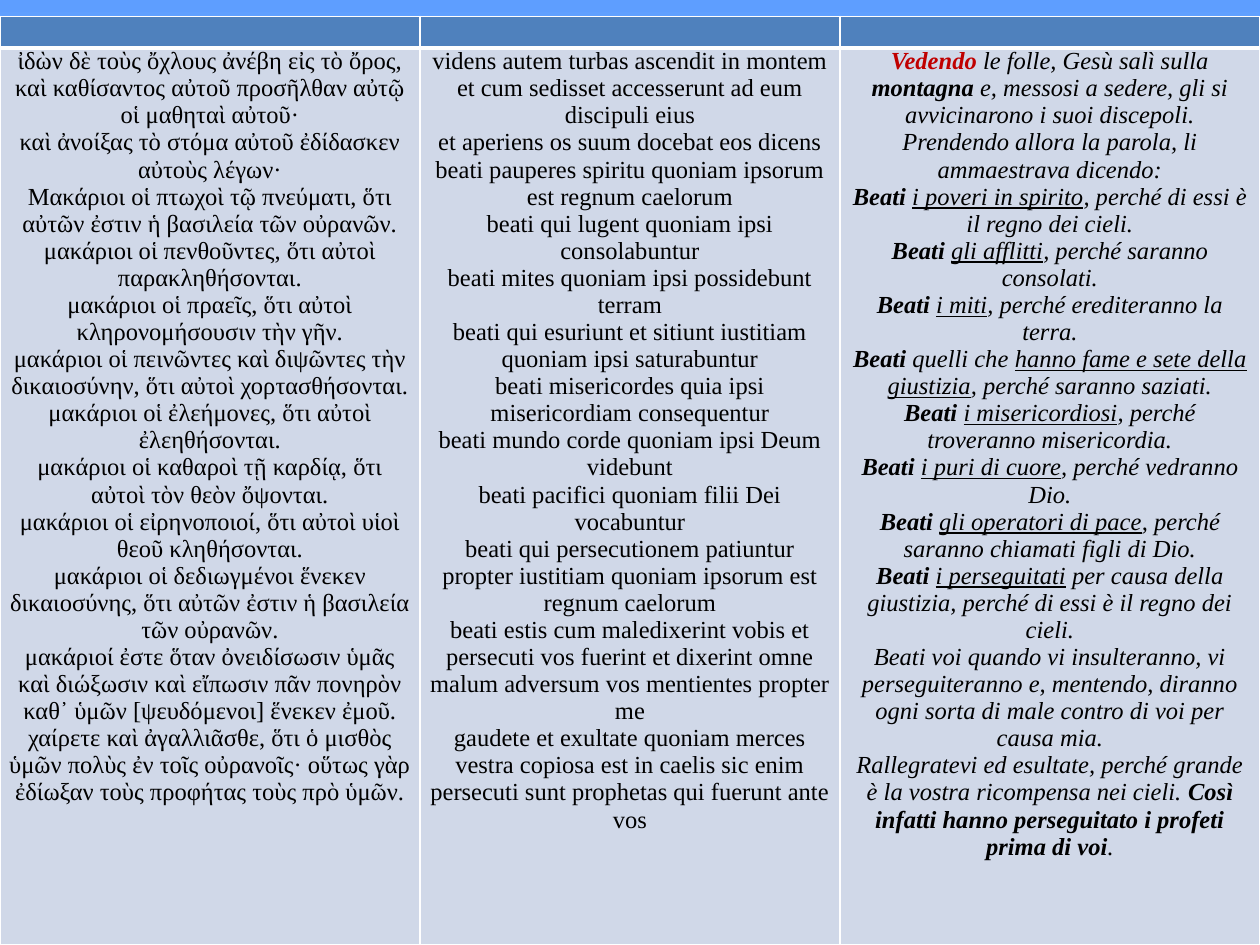
from dataclasses import dataclass

import pptx
import pptx.dml.color
import pptx.enum.text
import pptx.oxml
import pptx.oxml.ns
import pptx.util
from lxml import etree

Inches = pptx.util.Inches
Pt = pptx.util.Pt
RGB = pptx.dml.color.RGBColor.from_string
qn = pptx.oxml.ns.qn


@dataclass(frozen=True)
class Theme:
    font: str = "Times New Roman"
    size: float = 14
    ink: str = "000000"
    red: str = "C00000"
    head: str = "4F81BD"
    body: str = "D0D8E8"
    line: str = "FFFFFF"
    thin: float = 1
    thick: float = 3
    sky: tuple = ((0, "5E9EFF"), (26, "85C2FF"), (70, "C4D6EB"), (100, "FFEBFA"))


@dataclass(frozen=True)
class Part:
    text: str
    bold: bool = False
    under: bool = False
    color: str | None = None


@dataclass(frozen=True)
class Column:
    verses: list[list[Part]]
    slant: bool = False


THEME = Theme()


def plain(*lines: str) -> list[list[Part]]:
    return [[Part(line)] for line in lines]


def bless(who: str, rest: str) -> list[Part]:
    return [Part("Beati ", bold=True), Part(who, under=True), Part(rest)]


GREEK = Column(plain(
    "ἰδὼν δὲ τοὺς ὄχλους ἀνέβη εἰς τὸ ὄρος, καὶ καθίσαντος αὐτοῦ προσῆλθαν αὐτῷ οἱ μαθηταὶ αὐτοῦ·",
    "καὶ ἀνοίξας τὸ στόμα αὐτοῦ ἐδίδασκεν αὐτοὺς λέγων·",
    "Μακάριοι οἱ πτωχοὶ τῷ πνεύματι, ὅτι αὐτῶν ἐστιν ἡ βασιλεία τῶν οὐρανῶν.",
    "μακάριοι οἱ πενθοῦντες, ὅτι αὐτοὶ παρακληθήσονται.",
    "μακάριοι οἱ πραεῖς, ὅτι αὐτοὶ κληρονομήσουσιν τὴν γῆν.",
    "μακάριοι οἱ πεινῶντες καὶ διψῶντες τὴν δικαιοσύνην, ὅτι αὐτοὶ χορτασθήσονται.",
    "μακάριοι οἱ ἐλεήμονες, ὅτι αὐτοὶ ἐλεηθήσονται.",
    "μακάριοι οἱ καθαροὶ τῇ καρδίᾳ, ὅτι αὐτοὶ τὸν θεὸν ὄψονται.",
    "μακάριοι οἱ εἰρηνοποιοί, ὅτι αὐτοὶ υἱοὶ θεοῦ κληθήσονται.",
    "μακάριοι οἱ δεδιωγμένοι ἕνεκεν δικαιοσύνης, ὅτι αὐτῶν ἐστιν ἡ βασιλεία τῶν οὐρανῶν.",
    "μακάριοί ἐστε ὅταν ὀνειδίσωσιν ὑμᾶς καὶ διώξωσιν καὶ εἴπωσιν πᾶν πονηρὸν "
    "καθ᾽ ὑμῶν [ψευδόμενοι] ἕνεκεν ἐμοῦ.",
    "χαίρετε καὶ ἀγαλλιᾶσθε, ὅτι ὁ μισθὸς ὑμῶν πολὺς ἐν τοῖς οὐρανοῖς· "
    "οὕτως γὰρ ἐδίωξαν τοὺς προφήτας τοὺς πρὸ ὑμῶν.",
))

LATIN = Column(plain(
    "videns autem turbas ascendit in montem et cum sedisset accesserunt ad eum discipuli eius",
    "et aperiens os suum docebat eos dicens",
    "beati pauperes spiritu quoniam ipsorum est regnum caelorum",
    "beati qui lugent quoniam ipsi consolabuntur",
    "beati mites quoniam ipsi possidebunt terram",
    "beati qui esuriunt et sitiunt iustitiam quoniam ipsi saturabuntur",
    "beati misericordes quia ipsi misericordiam consequentur",
    "beati mundo corde quoniam ipsi Deum videbunt",
    "beati pacifici quoniam filii Dei vocabuntur",
    "beati qui persecutionem patiuntur propter iustitiam quoniam ipsorum est regnum caelorum",
    "beati estis cum maledixerint vobis et persecuti vos fuerint et dixerint omne malum "
    "adversum vos mentientes propter me",
    "gaudete et exultate quoniam merces vestra copiosa est in caelis sic enim persecuti sunt "
    "prophetas qui fuerunt ante vos",
))

TUSCAN = Column([
    [Part("Vedendo", bold=True, color=THEME.red), Part(" le folle, Gesù salì sulla "),
     Part("montagna", bold=True),
     Part(" e, messosi a sedere, gli si avvicinarono i suoi discepoli.")],
    [Part("Prendendo allora la parola, li ammaestrava dicendo:")],
    bless("i poveri in spirito", ", perché di essi è il regno dei cieli."),
    bless("gli afflitti", ", perché saranno consolati."),
    bless("i miti", ", perché erediteranno la terra."),
    [Part("Beati", bold=True), Part(" quelli che "),
     Part("hanno fame e sete della giustizia", under=True), Part(", perché saranno saziati.")],
    bless("i misericordiosi", ", perché troveranno misericordia."),
    bless("i puri di cuore", ", perché vedranno Dio."),
    bless("gli operatori di pace", ", perché saranno chiamati figli di Dio."),
    bless("i perseguitati", " per causa della giustizia, perché di essi è il regno dei cieli."),
    [Part("Beati voi quando vi insulteranno, vi perseguiteranno e, mentendo, diranno ogni sorta "
          "di male contro di voi per causa mia.")],
    [Part("Rallegratevi ed esultate, perché grande è la vostra ricompensa nei cieli. "),
     Part("Così infatti hanno perseguitato i profeti prima di voi", bold=True), Part(".")],
], slant=True)


def paint_sky(slide) -> None:
    fill = slide.background.fill
    fill.gradient()
    grad = slide.background._cSld.find(".//" + qn("a:gradFill"))
    stops = grad.find(qn("a:gsLst"))
    for old in list(stops):
        stops.remove(old)
    for spot, color in THEME.sky:
        stop = etree.SubElement(stops, qn("a:gs"), pos=str(spot * 1000))
        etree.SubElement(stop, qn("a:srgbClr"), val=color)
    lin = grad.find(qn("a:lin"))
    lin.set("ang", str(90 * 60000))
    lin.set("scaled", "0")


def dress(cell, color: str, top: float, base: float) -> None:
    cell.margin_left = cell.margin_right = Inches(0.07)
    cell.margin_top = cell.margin_bottom = 0
    cell.fill.solid()
    cell.fill.fore_color.rgb = RGB(color)
    props = cell._tc.get_or_add_tcPr()
    edges = (("L", THEME.thin), ("R", THEME.thin), ("T", top), ("B", base))
    for place, (side, width) in enumerate(edges):
        line = etree.Element(qn(f"a:ln{side}"), w=str(Pt(width)))
        solid = etree.SubElement(line, qn("a:solidFill"))
        etree.SubElement(solid, qn("a:srgbClr"), val=THEME.line)
        props.insert(place, line)


def set_font(font, slant: bool) -> None:
    font.name = THEME.font
    font.size = Pt(THEME.size)
    font.color.rgb = RGB(THEME.ink)
    font.bold = False
    font.italic = slant


def write(cell, column: Column) -> None:
    frame = cell.text_frame
    for count, verse in enumerate(column.verses):
        para = frame.add_paragraph() if count else frame.paragraphs[0]
        para.alignment = pptx.enum.text.PP_ALIGN.CENTER
        set_font(para.font, column.slant)
        for part in verse:
            run = para.add_run()
            run.text = part.text
            if part.bold:
                run.font.bold = True
            if part.under:
                run.font.underline = True
            if part.color:
                run.font.color.rgb = RGB(part.color)


def main() -> None:
    deck = pptx.Presentation()
    deck.slide_width, deck.slide_height = Inches(10), Inches(7.5)
    slide = deck.slides.add_slide(deck.slide_layouts[6])
    paint_sky(slide)
    texts = (GREEK, LATIN, TUSCAN)
    table = slide.shapes.add_table(
        2, len(texts), 0, Inches(0.13), deck.slide_width, Inches(7.37)).table
    table.rows[0].height, table.rows[1].height = Inches(0.25), Inches(7.12)
    for col, text in enumerate(texts):
        head, body = table.cell(0, col), table.cell(1, col)
        dress(head, THEME.head, THEME.thin, THEME.thick)
        dress(body, THEME.body, THEME.thick, THEME.thin)
        para = head.text_frame.paragraphs[0]
        etree.SubElement(para._p, qn("a:endParaRPr"), sz=str(THEME.size * 100))
        write(body, text)
    deck.save("out.pptx")


if __name__ == "__main__":
    main()
